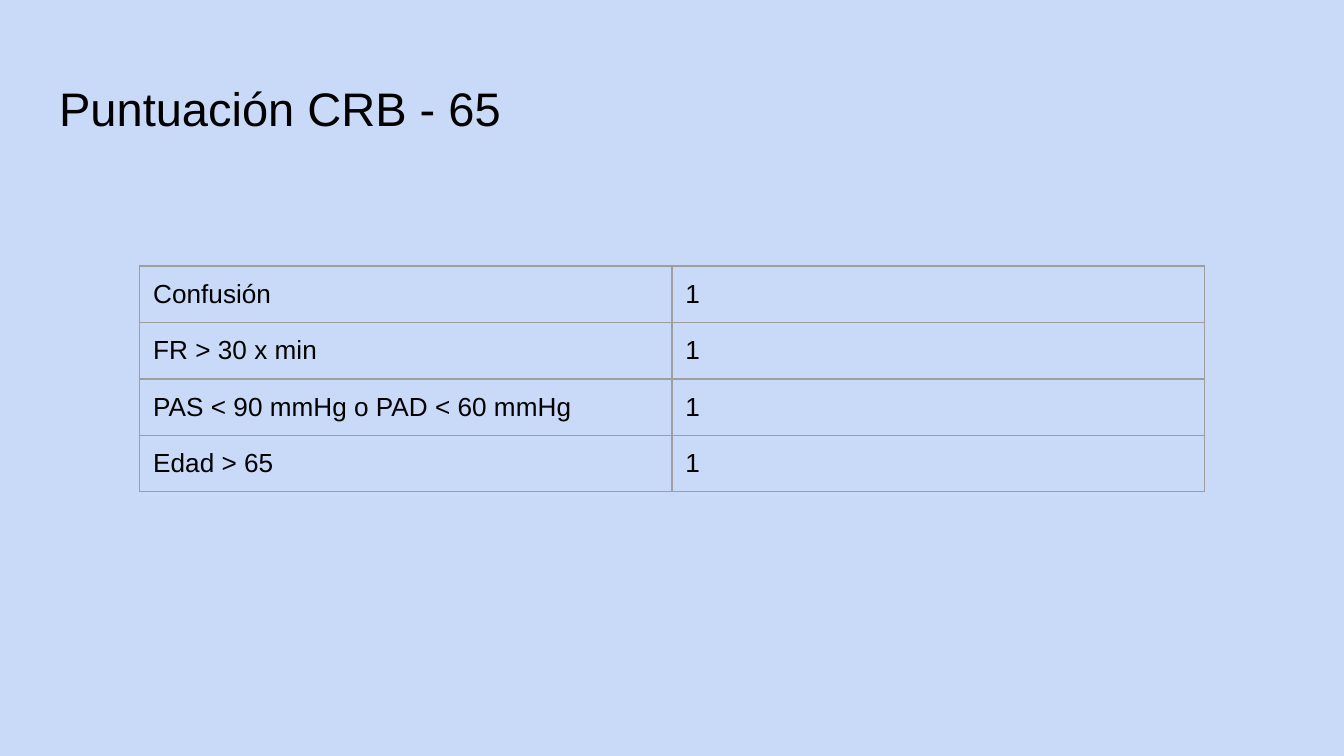
import pptx
import pptx.util
import pptx.dml.color
import pptx.enum.text
import pptx.oxml.ns
import lxml.etree
from dataclasses import dataclass

Inches = pptx.util.Inches
Pt = pptx.util.Pt
RGB = pptx.dml.color.RGBColor.from_string


@dataclass(frozen=True)
class Theme:
    background: str = "C9DAF8"
    text: str = "000000"
    border: str = "9E9E9E"
    font: str = "Arial"
    title_size: float = 25.2
    cell_size: float = 14
    border_width: float = 0.75
    inset: float = 0.1


theme = Theme()


def write(tf, text, size, color=theme.text, font=theme.font):
    p = tf.paragraphs[0]
    p.alignment = pptx.enum.text.PP_ALIGN.LEFT
    r = p.add_run()
    r.text = text
    r.font.size = Pt(size)
    r.font.name = font
    r.font.color.rgb = RGB(color)


def add_borders(cell, color, width):
    tcPr = cell._tc.get_or_add_tcPr()
    qn = pptx.oxml.ns.qn
    for side in ("a:lnL", "a:lnR", "a:lnT", "a:lnB"):
        ln = lxml.etree.SubElement(tcPr, qn(side), w=str(Pt(width)))
        fill = lxml.etree.SubElement(ln, qn("a:solidFill"))
        lxml.etree.SubElement(fill, qn("a:srgbClr"), val=color)


# 16:9 slide and background
prs = pptx.Presentation()
prs.slide_width = Inches(10)
prs.slide_height = Inches(10 * 9 / 16)
s = prs.slides.add_slide(prs.slide_layouts[5])
s.background.fill.solid()
s.background.fill.fore_color.rgb = RGB(theme.background)

# Title
title = s.shapes.title
title.left, title.top = Inches(0.34), Inches(0.49)
title.width, title.height = Inches(9.32), Inches(0.63)
tf = title.text_frame
tf.margin_left = tf.margin_right = tf.margin_top = tf.margin_bottom = Inches(theme.inset)
tf.vertical_anchor = pptx.enum.text.MSO_ANCHOR.MIDDLE
tf.word_wrap = True
tf.auto_size = pptx.enum.text.MSO_AUTO_SIZE.NONE
write(tf, "Puntuación CRB - 65", size=theme.title_size)

# Score table: criterion and points
scores = [
    ("Confusión", "1"),
    ("FR > 30 x min", "1"),
    ("PAS < 90 mmHg o PAD < 60 mmHg", "1"),
    ("Edad > 65", "1"),
]
col_width, row_height = 3.96, 0.42
table = s.shapes.add_table(
    len(scores), 2, Inches(1.04), Inches(1.98),
    Inches(2 * col_width), Inches(len(scores) * row_height)).table
table.first_row = table.horz_banding = False
for i, row in enumerate(scores):
    for j, text in enumerate(row):
        cell = table.cell(i, j)
        cell.margin_left = cell.margin_right = Inches(theme.inset)
        cell.margin_top = cell.margin_bottom = Inches(theme.inset)
        add_borders(cell, theme.border, theme.border_width)
        cell.fill.background()
        write(cell.text_frame, text, size=theme.cell_size)

prs.save("out.pptx")
